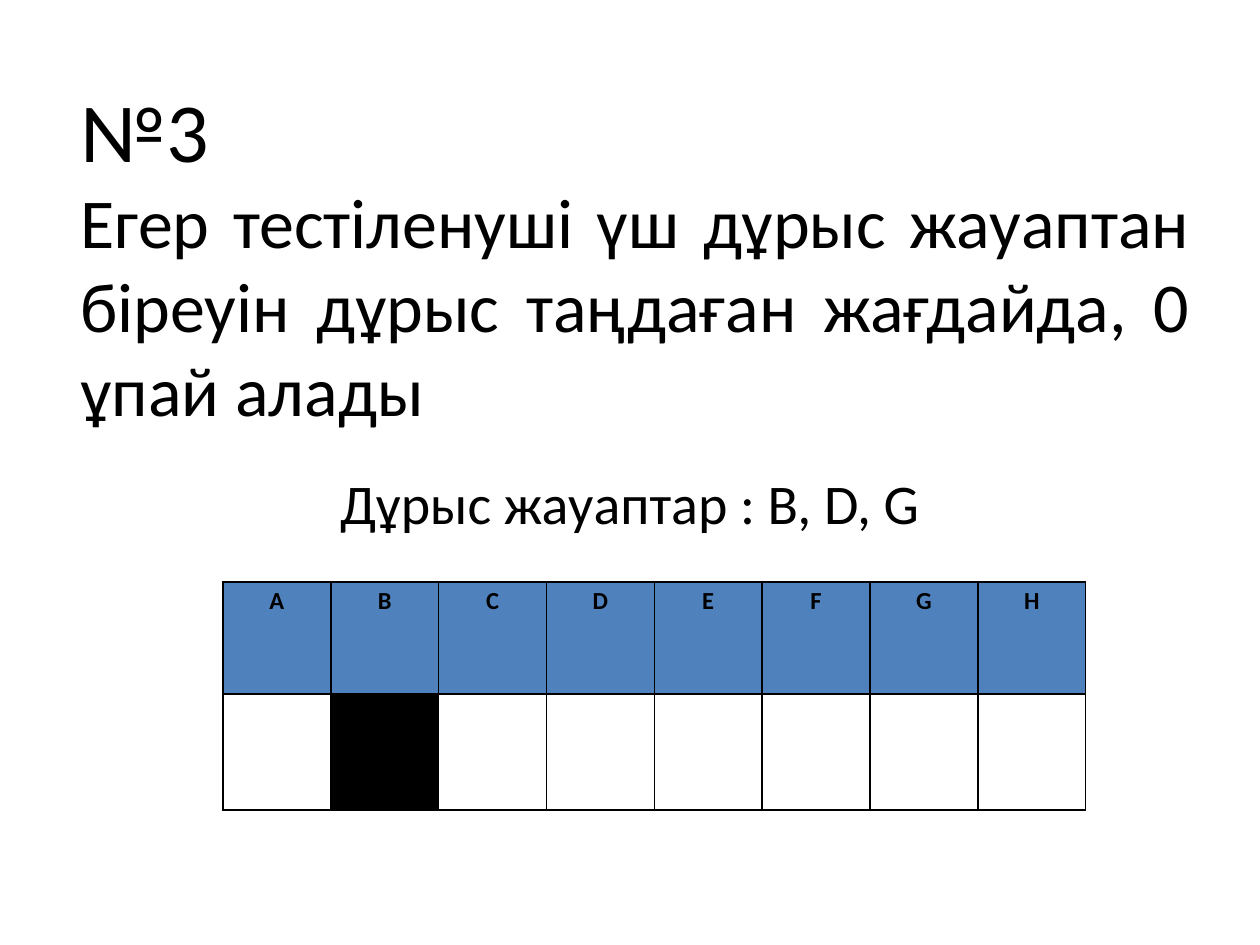
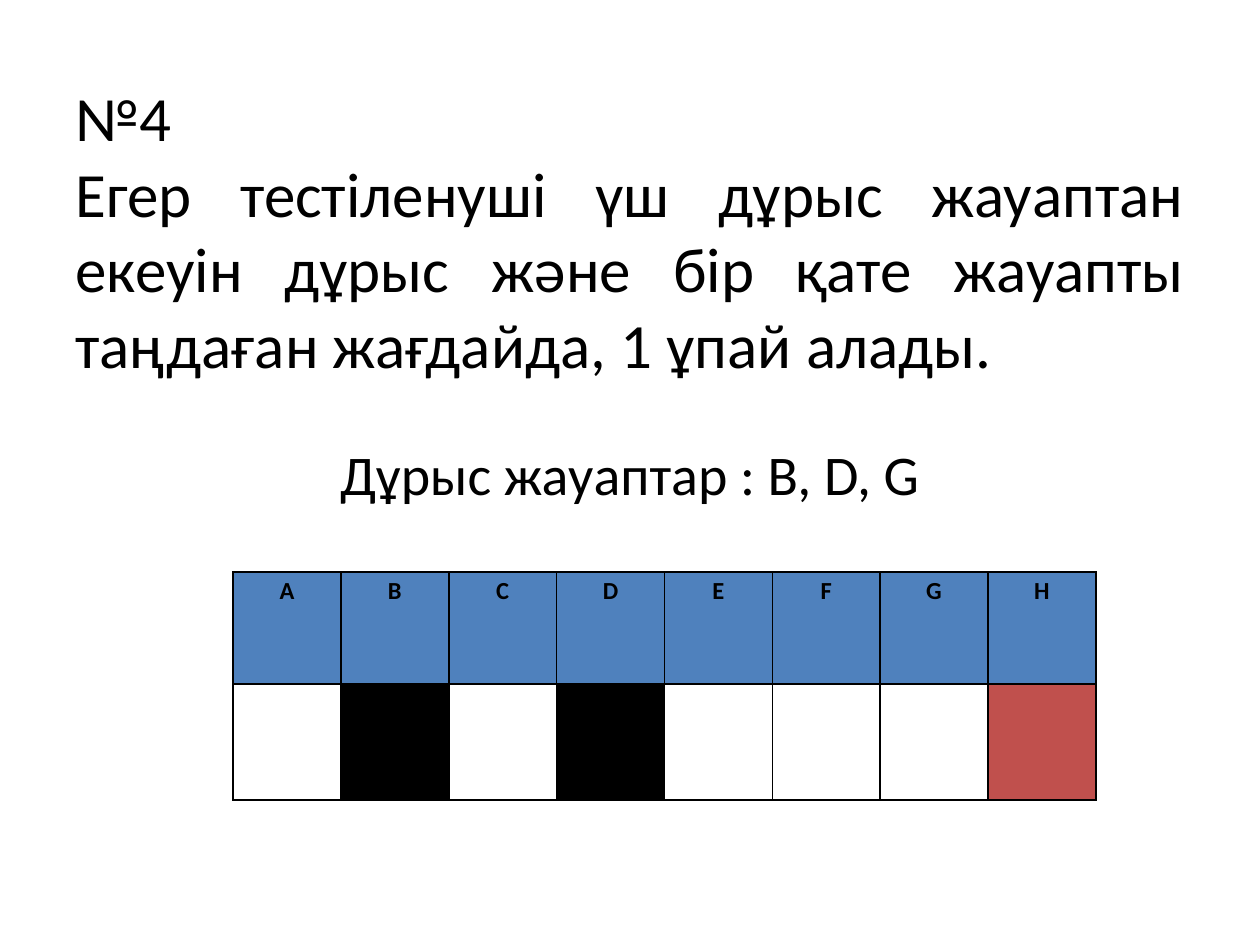
from lxml import etree
from pptx import Presentation
from pptx.dml.color import RGBColor
from pptx.enum import text as t
from pptx.oxml import ns
from pptx.util import Pt

FONT = "Calibri"
HEX = {"ink": "000000", "head": "4F81BD", "wrong": "C0504D"}
KEYS = "ABCDEFGH"
ANSWER = "Дұрыс жауаптар : B, D, G"
COL, ROWS = 61.65, (64, 66.3)

# boxes: left, top, width, height in points
TASKS = [
    {
        "title": [
            ("№3", 48),
            ("Егер тестіленуші үш дұрыс жауаптан біреуін дұрыс таңдаған "
             "жағдайда, 0 ұпай алады", 40),
        ],
        "head": (38.9, 26.6, 648, 237.6),
        "body": (68.4, 264.2, 583.2, 218.2),
        "grid": (127.4, 332.6),
        "marks": {"B": "ink"},
    },
    {
        "title": [
            ("№4", 36),
            ("Егер тестіленуші үш дұрыс жауаптан екеуін дұрыс және бір қате "
             "жауапты таңдаған жағдайда, 1 ұпай алады.", 36),
        ],
        "head": (36, 20.9, 648, 221),
        "body": (68.4, 247.7, 583.2, 244.1),
        "grid": (133.2, 326.9),
        "marks": {"B": "ink", "D": "ink", "H": "wrong"},
    },
]


def write(frame, lines, align="CENTER", bold=False, space=None):
    """Fill one paragraph with (text, size) lines split by line breaks."""
    para = frame.paragraphs[0]
    para.alignment = getattr(t.PP_ALIGN, align)
    para.line_spacing = space
    for i, (words, size) in enumerate(lines):
        if i:
            para.add_line_break()
        run = para.add_run()
        run.text = words
        run.font.name, run.font.size, run.font.bold = FONT, Pt(size), bold
        run.font.color.rgb = RGBColor.from_string(HEX["ink"])


def add_text(slide, box, lines, anchor="TOP", **style):
    frame = slide.shapes.add_textbox(*map(Pt, box)).text_frame
    frame.word_wrap = True
    frame.vertical_anchor = getattr(t.MSO_ANCHOR, anchor)
    write(frame, lines, **style)


def paint(cell, color):
    """Set the fill, if any, and a thin dark border on every side."""
    if color:
        cell.fill.solid()
        cell.fill.fore_color.rgb = RGBColor.from_string(HEX[color])
    else:
        cell.fill.background()
    props = cell._tc.get_or_add_tcPr()
    for i, side in enumerate("LRTB"):
        line = etree.Element(ns.qn("a:ln" + side), w=str(Pt(1)))
        fill = etree.SubElement(line, ns.qn("a:solidFill"))
        etree.SubElement(fill, ns.qn("a:srgbClr"), val=HEX["ink"])
        props.insert(i, line)


def add_grid(slide, spot, marks):
    size = COL * len(KEYS), sum(ROWS)
    table = slide.shapes.add_table(
        len(ROWS), len(KEYS), *map(Pt, spot + size)).table
    table.first_row = table.horz_banding = False
    for row, high in zip(table.rows, ROWS):
        row.height = Pt(high)
    for i, key in enumerate(KEYS):
        table.columns[i].width = Pt(COL)
        top = table.cell(0, i)
        top.margin_left = top.margin_right = Pt(5)
        top.margin_top = top.margin_bottom = 0
        write(top.text_frame, [(key, 14)], bold=True, space=1.15)
        paint(top, "head")
        paint(table.cell(1, i), marks.get(key))


def main():
    deck = Presentation()
    deck.slide_width, deck.slide_height = Pt(720), Pt(540)
    for task in TASKS:
        slide = deck.slides.add_slide(deck.slide_layouts[6])
        add_text(slide, task["head"], task["title"],
                 anchor="MIDDLE", align="JUSTIFY")
        add_text(slide, task["body"], [(ANSWER, 32)])
        add_grid(slide, task["grid"], task["marks"])
    deck.save("out.pptx")


if __name__ == "__main__":
    main()
